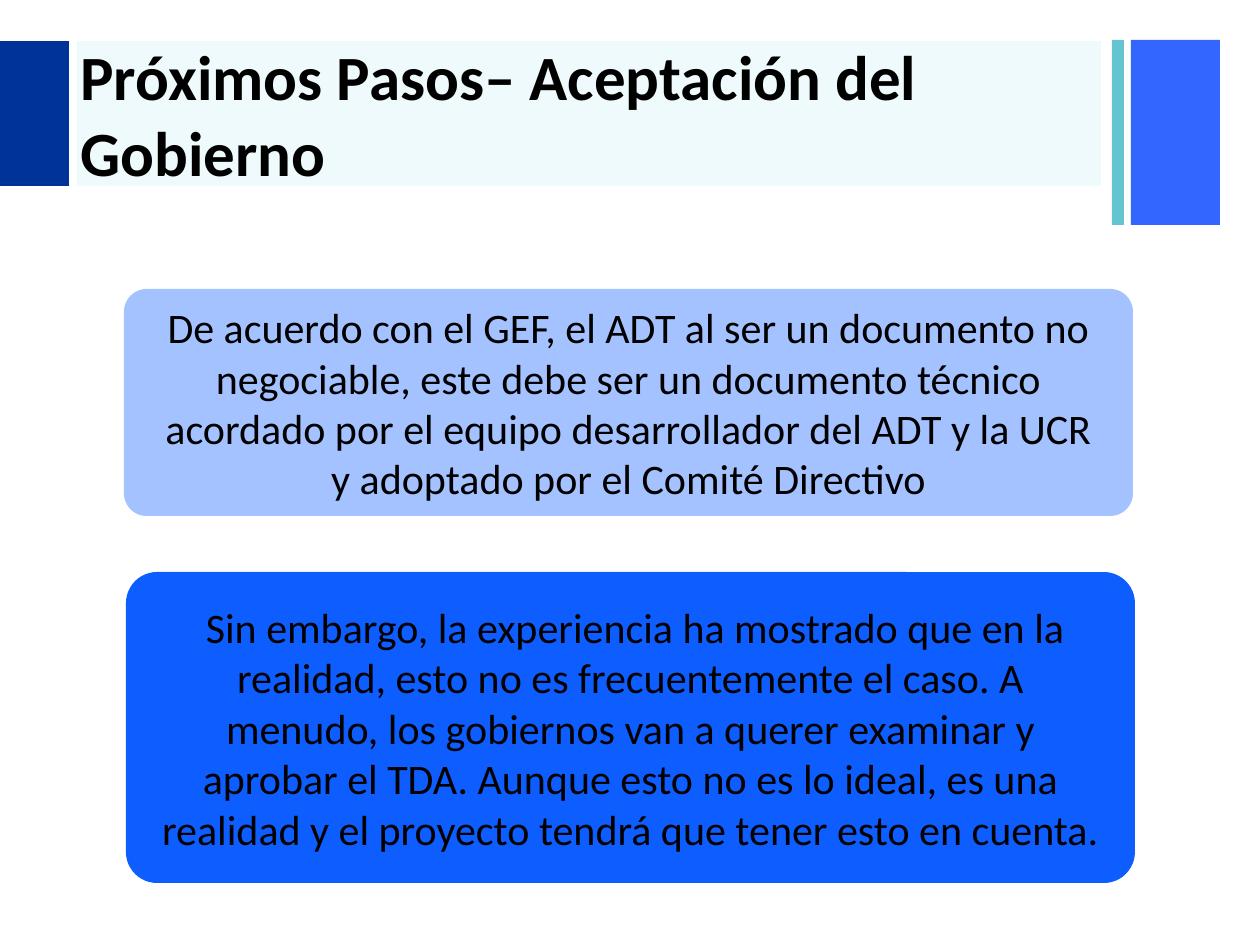
"""Build the slide on the government's acceptance of the ADT."""
from lxml.etree import SubElement
from pptx import Presentation
from pptx.dml.color import RGBColor
from pptx.enum.shapes import MSO_SHAPE as SHAPE
from pptx.enum.text import MSO_ANCHOR as ANCHOR, PP_ALIGN as ALIGN
from pptx.oxml.ns import qn
from pptx.util import Emu, Inches, Pt


def px(n):
    return Emu(round(n * 914400 / 126))


def add_block(s, kind, box, color):
    sp = s.shapes.add_shape(kind, *[px(v) for v in box])
    sp.shadow.inherit = False
    sp.fill.solid()
    sp.fill.fore_color.rgb = RGBColor.from_string(color)
    sp.line.fill.background()
    return sp


prs = Presentation()
prs.slide_width, prs.slide_height = Inches(10), Inches(7.5)
s = prs.slides.add_slide(prs.slide_layouts[6])

for box, color in [
    ((1131, 40, 89, 185), "3366FF"),
    ((1112, 40, 12, 185), "65C4D2"),
    ((0, 41, 69, 145), "003399"),
]:
    add_block(s, SHAPE.RECTANGLE, box, color)

band = add_block(s, SHAPE.RECTANGLE, (77, 41, 1024, 145), "14C5D0")
SubElement(band.fill._xPr.find(".//" + qn("a:srgbClr")), qn("a:alpha"), val="7000")

title = s.shapes.add_textbox(px(68), px(43), px(1042), px(141))
tf = title.text_frame
tf.word_wrap = True
tf.vertical_anchor = ANCHOR.MIDDLE
p = tf.paragraphs[0]
p.text = "Próximos Pasos– Aceptación del Gobierno"
p.font.name, p.font.size, p.font.bold = "Calibri", Pt(36), True
p.font.color.rgb = RGBColor.from_string("000000")

for box, color, text in [
    ((124, 289, 1009, 227), "A3C2FF",
     "De acuerdo con el GEF, el ADT al ser un documento no negociable, este debe "
     "ser un documento técnico acordado por el equipo desarrollador del ADT y la "
     "UCR y adoptado por el Comité Directivo"),
    ((126, 572, 1009, 311), "0D5DFF",
     " Sin embargo, la experiencia ha mostrado que en la realidad, esto no es "
     "frecuentemente el caso. A menudo, los gobiernos van a querer examinar y "
     "aprobar el TDA. Aunque esto no es lo ideal, es una realidad y el proyecto "
     "tendrá que tener esto en cuenta."),
]:
    sp = add_block(s, SHAPE.ROUNDED_RECTANGLE, box, color)
    sp.adjustments[0] = 0.1
    tf = sp.text_frame
    tf.word_wrap = True
    tf.vertical_anchor = ANCHOR.MIDDLE
    tf.margin_left = tf.margin_right = px(24)
    tf.margin_top = tf.margin_bottom = px(0)
    p = tf.paragraphs[0]
    p.text = text
    p.alignment = ALIGN.CENTER
    p.font.name, p.font.size = "Calibri", Pt(24)
    p.font.color.rgb = RGBColor.from_string("000000")

prs.save("out.pptx")
